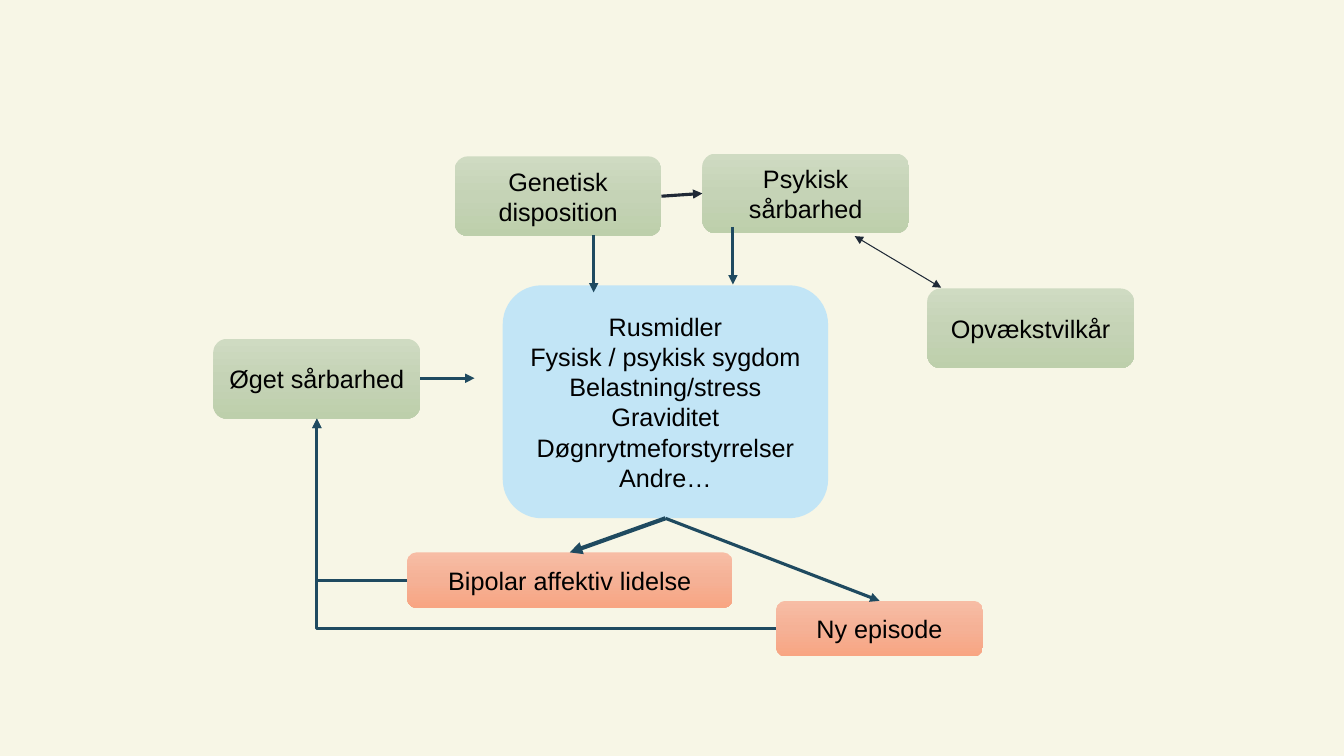
import copy

from lxml import etree
from pptx import Presentation
from pptx import util as u
from pptx.dml.color import RGBColor
from pptx.enum import shapes, text
from pptx.oxml.ns import qn

GREEN = ("CFDBC2", "C5D3B6", "BDCFAB")
ORANGE = ("F7BDA5", "F5B196", "F8A582")
TEAL, NAVY = "1F4A60", "1F2936"
SMALL_W, WIDE_W = 5.21, 8.2
FACTOR_H, OUTCOME_H = 2.01, 1.4
TOP, LEFT, BOTTOM, RIGHT = range(4)


def rgb(value):
    return RGBColor.from_string(value)


def fill_gradient(sp, colors):
    sp.fill.gradient()
    sp.fill.gradient_angle = 270
    first = sp._element.spPr.find(".//" + qn("a:gs"))
    first.addnext(copy.deepcopy(first))
    for stop, position, color in zip(sp.fill.gradient_stops, (0, 0.5, 1), colors):
        stop.position = position
        stop.color.rgb = rgb(color)


def fill_solid(sp, color, alpha):
    sp.fill.solid()
    sp.fill.fore_color.rgb = rgb(color)
    clr = sp._element.spPr.find(".//" + qn("a:srgbClr"))
    etree.SubElement(clr, qn("a:alpha"), val=str(alpha * 1000))


def add_box(s, x, y, w, h, lines):
    sp = s.shapes.add_shape(shapes.MSO_SHAPE.ROUNDED_RECTANGLE,
                            u.Cm(x), u.Cm(y), u.Cm(w), u.Cm(h))
    sp.shadow.inherit = False
    sp.line.fill.background()
    tf = sp.text_frame
    tf.word_wrap = True
    tf.vertical_anchor = text.MSO_ANCHOR.MIDDLE
    tf.margin_left = tf.margin_top = tf.margin_right = tf.margin_bottom = 0
    for i, line in enumerate(lines):
        p = tf.add_paragraph() if i else tf.paragraphs[0]
        p.text = line
        p.alignment = text.PP_ALIGN.CENTER
        p.font.size = u.Pt(18)
        p.font.name = "Arial"
        p.font.color.rgb = rgb("000000")
    return sp


def add_arrow(s, x1, y1, x2, y2, color=TEAL, width=2.25, ends=("tailEnd",)):
    cx = s.shapes.add_connector(shapes.MSO_CONNECTOR.STRAIGHT,
                                u.Cm(x1), u.Cm(y1), u.Cm(x2), u.Cm(y2))
    cx.line.color.rgb = rgb(color)
    cx.line.width = u.Pt(width)
    for end in ends:
        etree.SubElement(cx.line._get_or_add_ln(), qn("a:" + end), type="triangle")
    etree.SubElement(cx._element.spPr, qn("a:effectLst"))
    return cx


def join(s, start, start_site, end, end_site, **style):
    cx = add_arrow(s, 0, 0, 1, 1, **style)
    cx.begin_connect(start, start_site)
    cx.end_connect(end, end_site)


def add_return_arrow(s, source, target):
    x = (target.left + target.width / 2) / u.Cm(1)
    y = (target.top + target.height) / u.Cm(1)
    cx = add_arrow(s, x, y, source.left / u.Cm(1),
                   (source.top + source.height / 2) / u.Cm(1))
    spPr = cx._element.spPr
    spPr.find(qn("a:prstGeom")).set("prst", "bentConnector2")
    spPr.find(qn("a:xfrm")).set("rot", "10800000")


def add_factors(s, x, y):
    places = {
        "Psykisk sårbarhed": (12.32, 0),
        "Opvækstvilkår": (17.99, 3.4),
        "Øget sårbarhed": (0, 4.67),
        "Genetisk disposition": (6.08, 0.07),
    }
    boxes = {}
    for label, (dx, dy) in places.items():
        sp = add_box(s, x + dx, y + dy, SMALL_W, FACTOR_H, [label])
        fill_gradient(sp, GREEN)
        boxes[label] = sp
    join(s, boxes["Genetisk disposition"], RIGHT, boxes["Psykisk sårbarhed"], LEFT, color=NAVY)
    add_arrow(s, x + 16.16, y + 2.08, x + 18.34, y + 3.38, NAVY, 0.75, ("headEnd", "tailEnd"))
    add_arrow(s, x + SMALL_W, y + 5.66, x + 6.58, y + 5.66)
    return boxes["Øget sårbarhed"]


def add_triggers(s, x, y):
    sp = add_box(s, x, y, WIDE_W, 5.87, [
        "Rusmidler", "Fysisk / psykisk sygdom", "Belastning/stress",
        "Graviditet", "Døgnrytmeforstyrrelser", "Andre…"])
    fill_solid(sp, "A7DDFF", 65)
    for dx, dy in ((2.29, -1.27), (5.8, -1.47)):
        add_arrow(s, x + dx, y + dy, x + dx, y + dy + 1.45)
    return sp


def add_outcomes(s, x, y):
    disorder = add_box(s, x, y, WIDE_W, OUTCOME_H, ["Bipolar affektiv lidelse"])
    episode = add_box(s, x + 9.3, y + 1.22, SMALL_W, OUTCOME_H, ["Ny episode"])
    for sp in (disorder, episode):
        fill_gradient(sp, ORANGE)
    return disorder, episode


def build_vulnerability_slide(prs):
    s = prs.slides.add_slide(prs.slide_layouts[6])
    s.background.fill.solid()
    s.background.fill.fore_color.rgb = rgb("F7F6E6")
    vulnerability = add_factors(s, 5.38, 3.87)
    triggers = add_triggers(s, 12.67, 7.19)
    outcomes = add_outcomes(s, 10.26, 13.92)
    for sp, width in zip(outcomes, (3, 2.25)):
        join(s, triggers, BOTTOM, sp, TOP, width=width)
        add_return_arrow(s, sp, vulnerability)


def main():
    prs = Presentation()
    prs.slide_width, prs.slide_height = u.Cm(33.87), u.Cm(19.05)
    build_vulnerability_slide(prs)
    prs.save("out.pptx")


if __name__ == "__main__":
    main()
